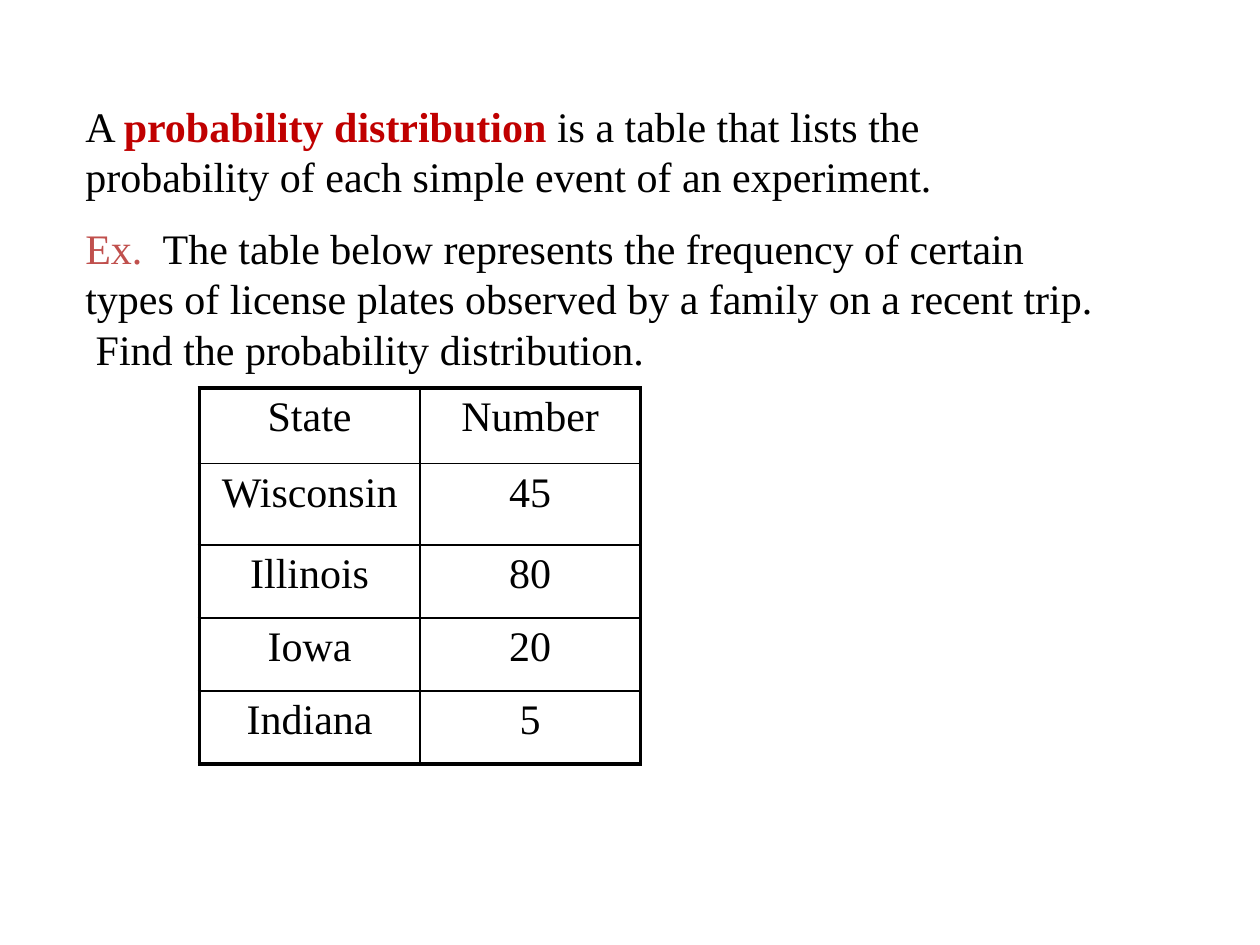
from lxml.etree import SubElement
from pptx import Presentation
from pptx.dml.color import RGBColor
from pptx.enum.text import MSO_AUTO_SIZE, PP_ALIGN as Align
from pptx.oxml.ns import qn
from pptx.util import Cm, Pt

BLACK = RGBColor(0x00, 0x00, 0x00)
DARK_RED = RGBColor(0xC0, 0x00, 0x00)
SOFT_RED = RGBColor(0xC0, 0x50, 0x4D)
FONT = "Times New Roman"
THICK, THIN = Pt(2.25), Pt(1)

# Each run: text, colour, bold
PARAGRAPHS = [
    [("A ", BLACK, False),
     ("probability distribution", DARK_RED, True),
     (" is a table that lists the probability of each simple event "
      "of an experiment.", BLACK, False)],
    [("Ex.", SOFT_RED, False),
     ("  The table below represents the frequency of certain types of "
      "license plates observed by a family on a recent trip.  Find the "
      "probability distribution.", BLACK, False)],
]
PLATES = [("State", "Number"), ("Wisconsin", "45"), ("Illinois", "80"),
          ("Iowa", "20"), ("Indiana", "5")]
ROW_HEIGHTS = [1.52, 1.65, 1.47, 1.47, 1.47]


def style_paragraph(p, space_before):
    p.font.name = FONT
    p.font.size = Pt(24)
    p.space_before = space_before


def add_text(s):
    tf = s.shapes.add_textbox(Cm(1.47), Cm(1.9), Cm(20.96), Cm(5.9)).text_frame
    tf.word_wrap = True
    tf.auto_size = MSO_AUTO_SIZE.SHAPE_TO_FIT_TEXT
    for i, runs in enumerate(PARAGRAPHS):
        p = tf.add_paragraph() if i else tf.paragraphs[0]
        style_paragraph(p, Pt(12))
        for text, color, bold in runs:
            r = p.add_run()
            r.text = text
            r.font.color.rgb = color
            r.font.bold = bold


def set_borders(cell, widths):
    tc_pr = cell._tc.get_or_add_tcPr()
    for i, (side, width) in enumerate(widths.items()):
        ln = SubElement(tc_pr, qn(f"a:ln{side}"), w=str(width))
        fill = SubElement(ln, qn("a:solidFill"))
        SubElement(fill, qn("a:srgbClr"), val=str(BLACK))
        tc_pr.insert(i, ln)  # borders come before the fill


def add_table(s, rows):
    n_rows, n_cols = len(rows), len(rows[0])
    table = s.shapes.add_table(n_rows, n_cols, Cm(4.02), Cm(7.82),
                               Cm(8.89), Cm(sum(ROW_HEIGHTS))).table
    table.first_row = table.horz_banding = False
    for i, row in enumerate(rows):
        table.rows[i].height = Cm(ROW_HEIGHTS[i])
        for j, text in enumerate(row):
            cell = table.cell(i, j)
            cell.text = text
            cell.fill.background()
            p = cell.text_frame.paragraphs[0]
            style_paragraph(p, Pt(4.8))
            p.alignment = Align.CENTER
            p.font.color.rgb = BLACK
            p.font.bold = False
            # Thick outer frame, thin inner lines
            set_borders(cell, {
                "L": THICK if j == 0 else THIN,
                "R": THICK if j == n_cols - 1 else THIN,
                "T": THICK if i == 0 else THIN,
                "B": THICK if i == n_rows - 1 else THIN,
            })


def main():
    prs = Presentation()
    prs.slide_width, prs.slide_height = Cm(25.4), Cm(19.05)
    s = prs.slides.add_slide(prs.slide_layouts[6])
    # Definition and example
    add_text(s)
    # Frequency table
    add_table(s, PLATES)
    prs.save("out.pptx")


if __name__ == "__main__":
    main()
